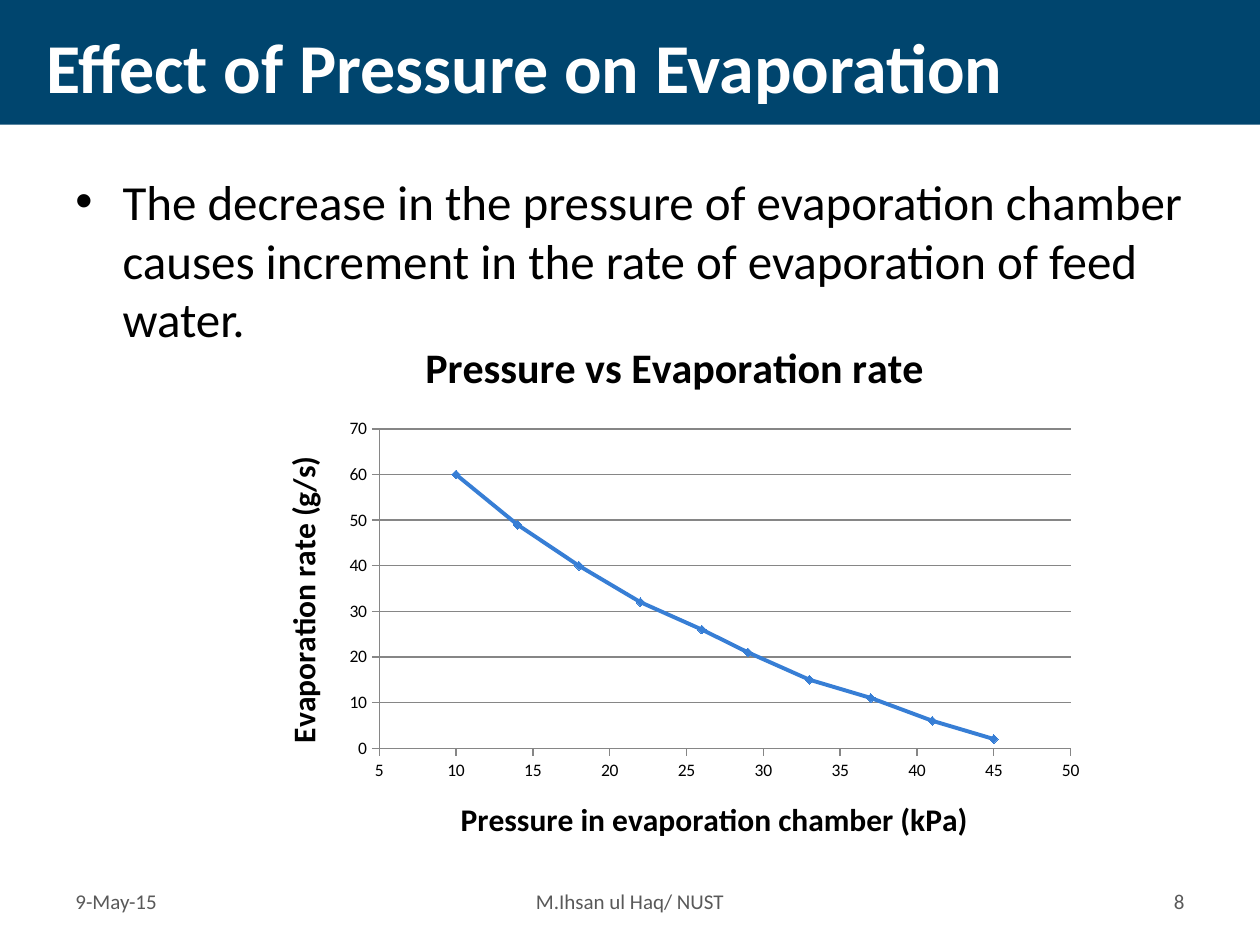
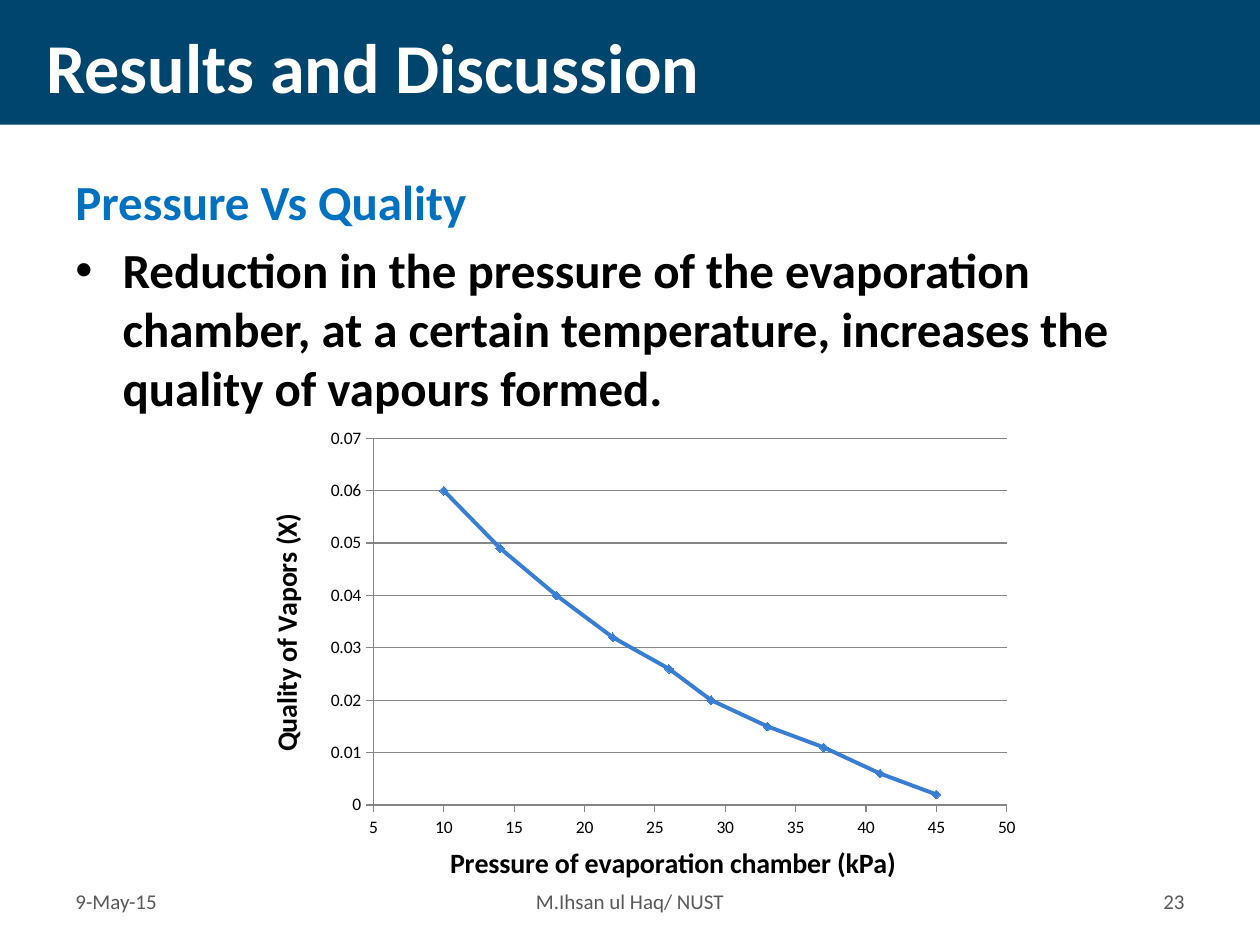
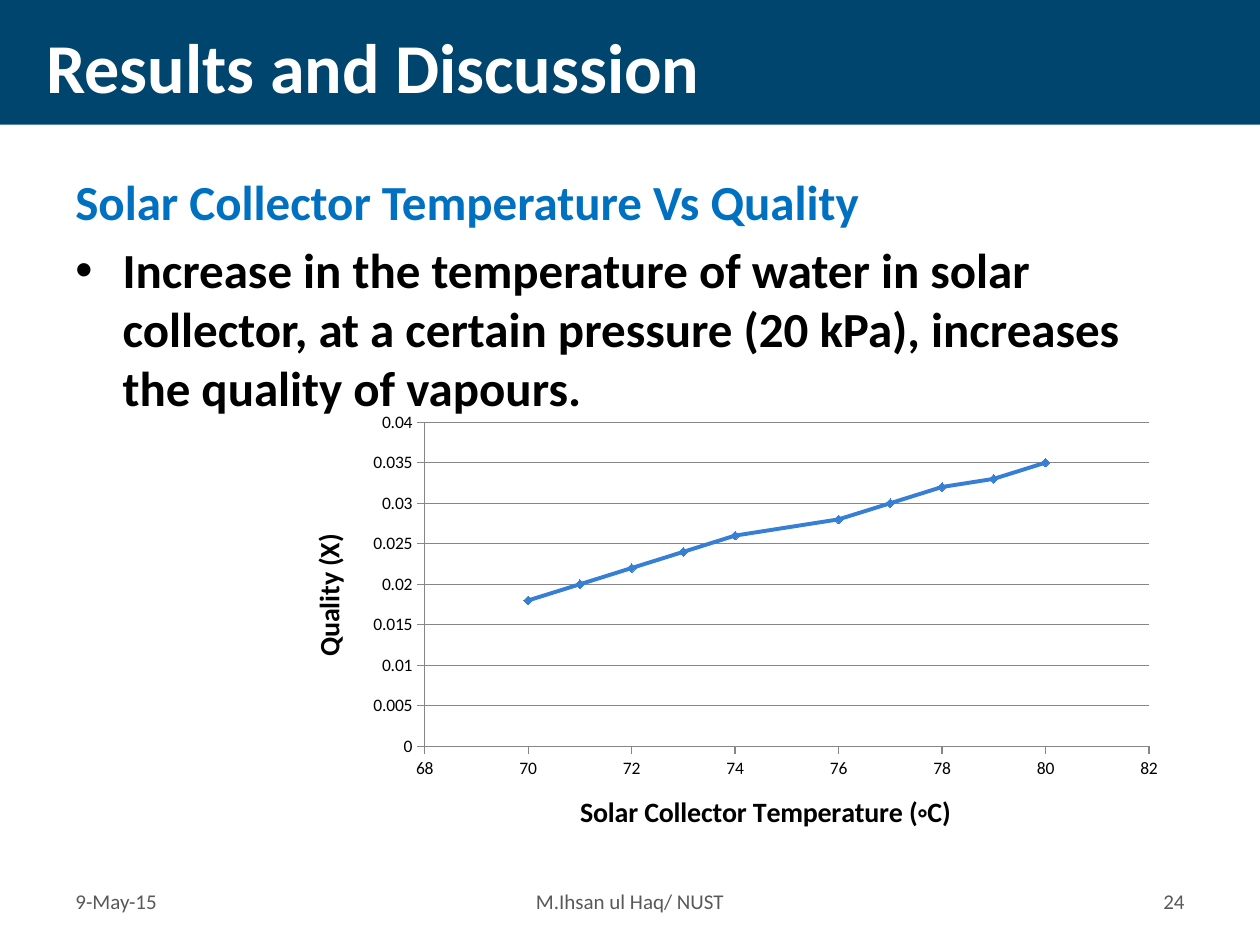
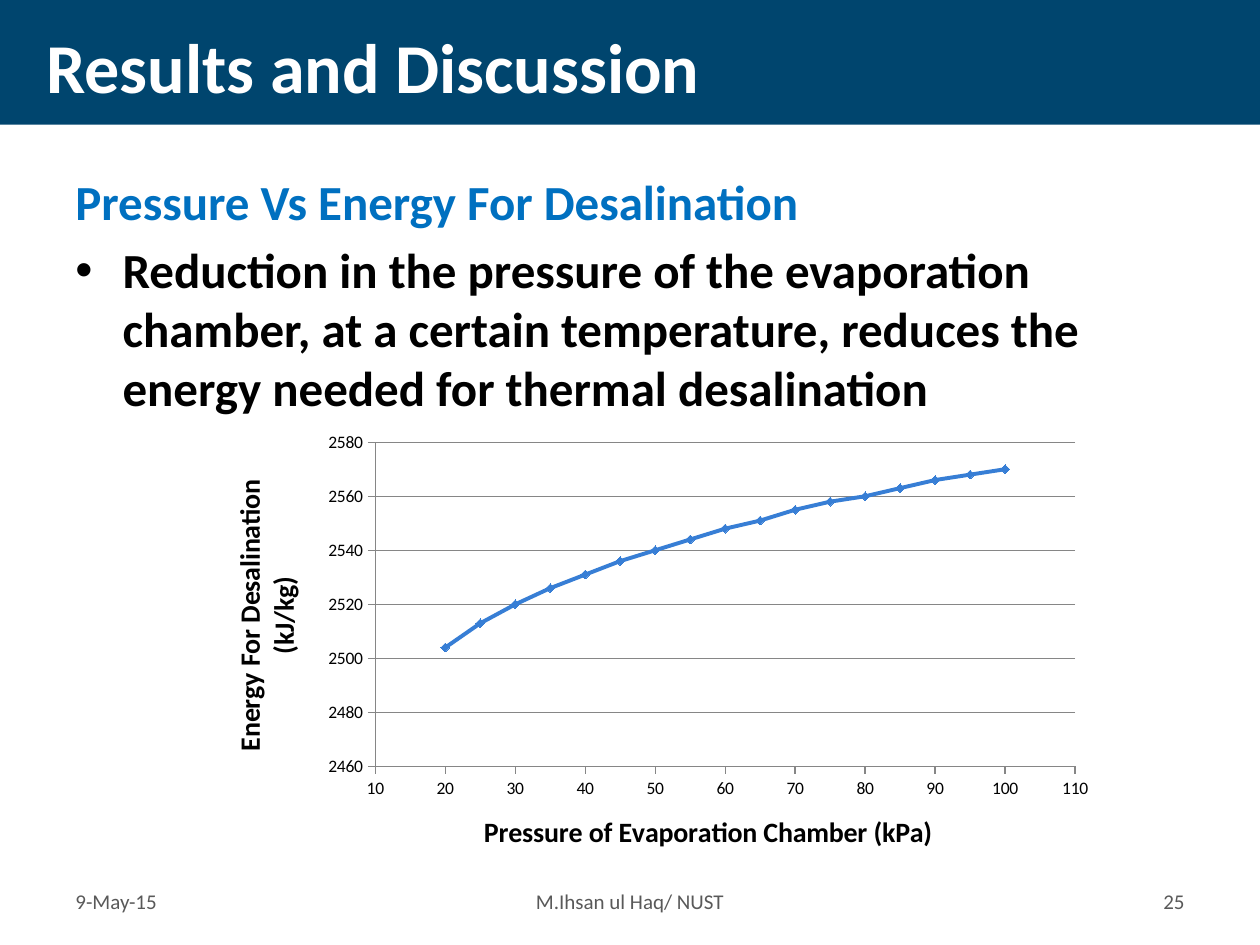
from dataclasses import dataclass

from lxml import etree
from pptx import Presentation
from pptx.chart.data import XyChartData
from pptx.dml.color import RGBColor
from pptx.enum.chart import XL_CHART_TYPE, XL_LEGEND_POSITION, XL_MARKER_STYLE, XL_TICK_MARK
from pptx.enum.shapes import MSO_SHAPE
from pptx.enum.text import MSO_ANCHOR, PP_ALIGN
from pptx.oxml.ns import qn
from pptx.util import Inches, Pt

SMOOTH_SCATTER = XL_CHART_TYPE.XY_SCATTER_SMOOTH
DIAMOND = XL_MARKER_STYLE.DIAMOND
TICK_OUT, TICK_NONE = XL_TICK_MARK.OUTSIDE, XL_TICK_MARK.NONE
RECTANGLE = MSO_SHAPE.RECTANGLE
TOP, MIDDLE = MSO_ANCHOR.TOP, MSO_ANCHOR.MIDDLE
LEFT, CENTER, RIGHT = PP_ALIGN.LEFT, PP_ALIGN.CENTER, PP_ALIGN.RIGHT

SLIDE_WIDTH, SLIDE_HEIGHT = Inches(10), Inches(7.5)
FONT = "Calibri"
NAVY, WHITE, BLACK = "00456E", "FFFFFF", "000000"
HEADING_BLUE, FOOTER_GRAY = "0070C0", "595959"
CURVE_BLUE, GRID_GRAY = "377ED5", "868686"

BAND_AREA = (0, 0, 100, 13.2)
TITLE_AREA = (2.7, 1.33, 94.5, 11.2)
FOOTER_TOP, FOOTER_HEIGHT = 92.67, 5.33
BODY_TOP, BODY_HEIGHT = 17.47, 72.27
BULLET_INDENT = Inches(0.375)
DATE, AUTHOR = "9-May-15", "M.Ihsan ul Haq/ NUST"


@dataclass
class Scale:
    title: str
    low: float
    high: float
    step: float


@dataclass
class Curve:
    area: tuple
    x_scale: Scale
    y_scale: Scale
    x_values: list
    y_values: list
    label_size: int = 16
    title: str = ""
    plot_area: tuple = ()


@dataclass
class Topic:
    number: int
    title: str
    statement: str
    curve: Curve
    heading: str = ""
    body_width: float = 90


CHAMBER_PRESSURES = [10, 14, 18, 22, 26, 29, 33, 37, 41, 45]

TOPICS = [
    Topic(
        8,
        "Effect of Pressure on Evaporation",
        "The decrease in the pressure of evaporation chamber causes increment "
        "in the rate of evaporation of feed water.",
        Curve(
            (20.1, 33.2, 66.9, 58.8),
            Scale("Pressure in evaporation chamber (kPa)", 5, 50, 5),
            Scale("Evaporation rate (g/s)", 0, 70, 10),
            CHAMBER_PRESSURES,
            [60, 49, 40, 32, 26, 21, 15, 11, 6, 2],
            label_size=18,
            title="Pressure vs Evaporation rate",
        ),
        body_width=90.7,
    ),
    Topic(
        23,
        "Results and Discussion",
        "Reduction in the pressure of the evaporation chamber, at a certain "
        "temperature, increases the quality of vapours formed.",
        Curve(
            (13.8, 41.6, 70.1, 52.53),
            Scale("Pressure of evaporation chamber (kPa)", 5, 50, 5),
            Scale("Quality of Vapors (X)", 0, 0.07, 0.01),
            CHAMBER_PRESSURES,
            [0.06, 0.049, 0.04, 0.032, 0.026, 0.02, 0.015, 0.011, 0.006, 0.002],
            plot_area=(22.6, 9.1, 71.7, 73.9),
        ),
        heading="Pressure Vs Quality",
    ),
    Topic(
        24,
        "Results and Discussion",
        "Increase in the temperature of water in solar collector, at a certain "
        "pressure (20 kPa), increases the quality of vapours.",
        Curve(
            (22.4, 42.67, 70.9, 48.27),
            Scale("Solar Collector Temperature (◦C)", 68, 82, 2),
            Scale("Quality (X)", 0, 0.04, 0.005),
            [70, 71, 72, 73, 74, 76, 77, 78, 79, 80],
            [0.018, 0.02, 0.022, 0.024, 0.026, 0.028, 0.03, 0.032, 0.033, 0.035],
        ),
        heading="Solar Collector Temperature Vs Quality",
    ),
    Topic(
        25,
        "Results and Discussion",
        "Reduction in the pressure of the evaporation chamber, at a certain "
        "temperature, reduces the energy needed for thermal desalination",
        Curve(
            (16.1, 44.8, 71.7, 48.27),
            Scale("Pressure of Evaporation Chamber (kPa)", 10, 110, 10),
            Scale("Energy For Desalination (kJ/kg)", 2460, 2580, 20),
            list(range(20, 101, 5)),
            [2504, 2513, 2520, 2526, 2531, 2536, 2540, 2544, 2548,
             2551, 2555, 2558, 2560, 2563, 2566, 2568, 2570],
        ),
        heading="Pressure Vs Energy For Desalination",
    ),
]


def color(hex_string):
    return RGBColor.from_string(hex_string)


def place(area):
    left, top, width, height = (share / 100 for share in area)
    return (
        int(left * SLIDE_WIDTH),
        int(top * SLIDE_HEIGHT),
        int(width * SLIDE_WIDTH),
        int(height * SLIDE_HEIGHT),
    )


def style_font(font, size, ink, bold=False):
    font.name = FONT
    font.size = Pt(size)
    font.bold = bold
    font.color.rgb = color(ink)


def write(paragraph, text, size, ink, bold=False):
    run = paragraph.add_run()
    run.text = text
    style_font(run.font, size, ink, bold)


def add_text_frame(slide, area, anchor):
    frame = slide.shapes.add_textbox(*place(area)).text_frame
    frame.word_wrap = True
    frame.vertical_anchor = anchor
    return frame


def add_line(slide, area, text, size, ink, bold=False, align=LEFT):
    paragraph = add_text_frame(slide, area, MIDDLE).paragraphs[0]
    paragraph.alignment = align
    write(paragraph, text, size, ink, bold)


def add_band(slide):
    band = slide.shapes.add_shape(RECTANGLE, *place(BAND_AREA))
    band.shadow.inherit = False
    band.fill.solid()
    band.fill.fore_color.rgb = color(NAVY)
    band.line.fill.background()


def add_footer(slide, number):
    for left, width, text, align in (
        (18.5, 63, AUTHOR, CENTER),
        (83.1, 11.9, str(number), RIGHT),
        (5, 11.9, DATE, LEFT),
    ):
        area = (left, FOOTER_TOP, width, FOOTER_HEIGHT)
        add_line(slide, area, text, 12, FOOTER_GRAY, align=align)


def make_bullet(paragraph):
    properties = paragraph._p.get_or_add_pPr()
    properties.set("marL", str(BULLET_INDENT))
    properties.set("indent", str(-BULLET_INDENT))
    etree.SubElement(properties, qn("a:buFont")).set("typeface", "Arial")
    etree.SubElement(properties, qn("a:buChar")).set("char", "•")


def add_body(slide, topic):
    area = (5, BODY_TOP, topic.body_width, BODY_HEIGHT)
    frame = add_text_frame(slide, area, TOP)
    statement = frame.paragraphs[0]
    if topic.heading:
        write(statement, topic.heading, 28, HEADING_BLUE, True)
        statement = frame.add_paragraph()
    for paragraph in frame.paragraphs:
        paragraph.space_before = Pt(5.6)
    make_bullet(statement)
    write(statement, topic.statement, 28, BLACK, bool(topic.heading))


def set_title(titled, text, size):
    frame = titled.text_frame
    write(frame.paragraphs[0], text, size, BLACK, True)
    return frame


def style_axis(axis, scale, label_size):
    axis.minimum_scale, axis.maximum_scale = scale.low, scale.high
    axis.major_unit = scale.step
    axis.major_tick_mark, axis.minor_tick_mark = TICK_OUT, TICK_NONE
    axis.format.line.color.rgb = color(GRID_GRAY)
    axis.format.line.width = Pt(0.75)
    axis.tick_labels.number_format = "General"
    axis.tick_labels.number_format_is_linked = False
    return set_title(axis.axis_title, scale.title, label_size)


def set_plot_area(chart, shares):
    plot_area = chart._chartSpace.chart.plotArea
    for automatic in plot_area.findall(qn("c:layout")):
        plot_area.remove(automatic)
    layout = etree.Element(qn("c:layout"))
    plot_area.insert(0, layout)
    manual = etree.SubElement(layout, qn("c:manualLayout"))
    settings = [("layoutTarget", "inner"), ("xMode", "edge"), ("yMode", "edge")]
    settings += [(side, f"{share / 100:.3f}") for side, share in zip("xywh", shares)]
    for tag, value in settings:
        etree.SubElement(manual, qn(f"c:{tag}")).set("val", value)


def style_series(series):
    series.smooth = True
    series.format.line.color.rgb = color(CURVE_BLUE)
    series.format.line.width = Pt(2.25)
    series.marker.style = DIAMOND
    series.marker.size = 5
    series.marker.format.fill.solid()
    series.marker.format.fill.fore_color.rgb = color(CURVE_BLUE)
    series.marker.format.line.color.rgb = color(CURVE_BLUE)


def add_curve(slide, curve):
    data = XyChartData(number_format="General")
    points = data.add_series("Series 1")
    for x, y in zip(curve.x_values, curve.y_values):
        points.add_data_point(x, y)
    chart = slide.shapes.add_chart(SMOOTH_SCATTER, *place(curve.area), data).chart
    style_font(chart.font, 10, BLACK)
    chart.has_legend = False
    chart.has_title = bool(curve.title)
    if curve.title:
        set_title(chart.chart_title, curve.title, 24)
        chart.chart_title.include_in_layout = False
    chart.plots[0].vary_by_categories = False
    style_series(chart.plots[0].series[0])

    style_axis(chart.category_axis, curve.x_scale, curve.label_size)
    chart.category_axis.has_major_gridlines = False
    y_title = style_axis(chart.value_axis, curve.y_scale, curve.label_size)
    y_title._txBody.bodyPr.set("rot", "-5400000")
    y_title._txBody.bodyPr.set("vert", "horz")
    chart.value_axis.has_major_gridlines = True
    grid_line = chart.value_axis.major_gridlines.format.line
    grid_line.color.rgb = color(GRID_GRAY)
    grid_line.width = Pt(0.75)
    if curve.plot_area:
        set_plot_area(chart, curve.plot_area)


def add_topic(deck, topic):
    slide = deck.slides.add_slide(deck.slide_layouts[6])
    add_band(slide)
    add_body(slide, topic)
    add_line(slide, TITLE_AREA, topic.title, 40, WHITE, True)
    add_footer(slide, topic.number)
    add_curve(slide, topic.curve)


def main():
    deck = Presentation()
    deck.slide_width, deck.slide_height = SLIDE_WIDTH, SLIDE_HEIGHT
    for topic in TOPICS:
        add_topic(deck, topic)
    deck.save("out.pptx")


if __name__ == "__main__":
    main()
